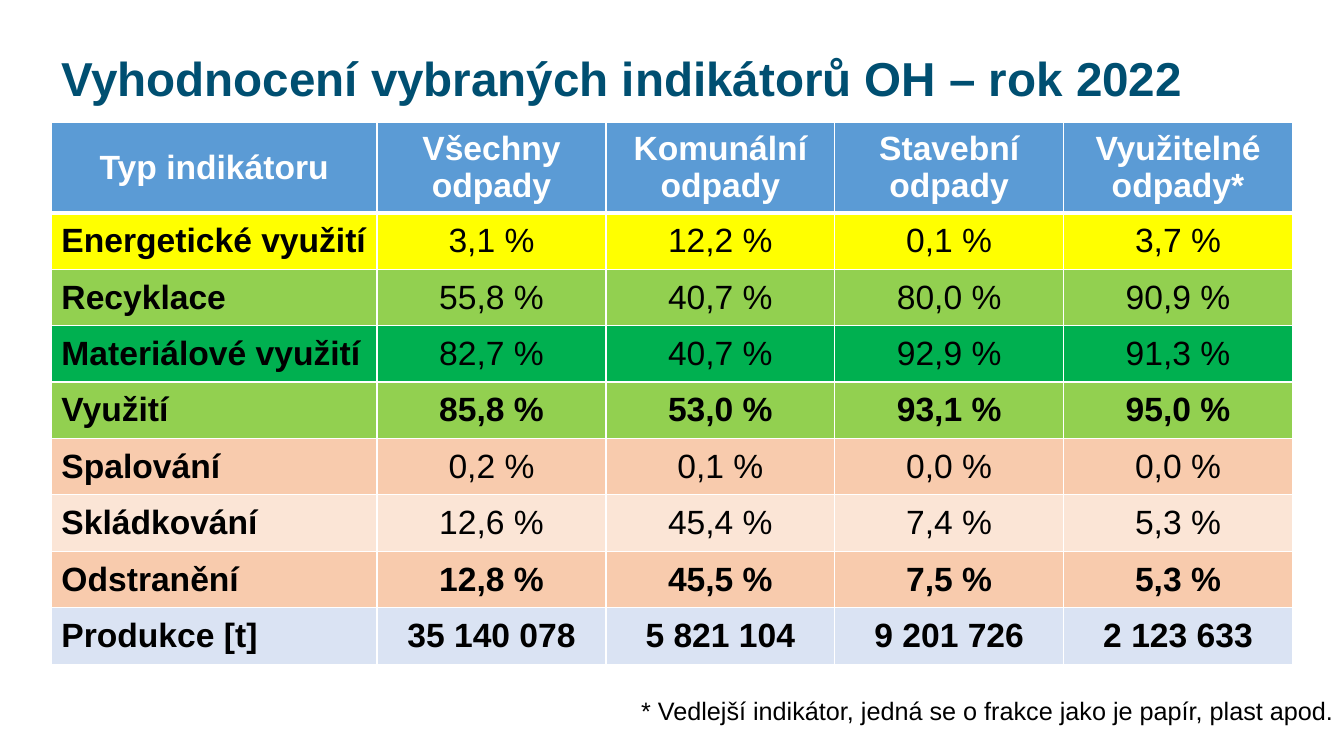
"""Builds a slide with a table of waste management indicators for 2022."""
from lxml import etree
from pptx import Presentation, util as u
from pptx.dml.color import RGBColor
from pptx.enum import text
from pptx.oxml.ns import qn

WHITE = RGBColor(0xFF, 0xFF, 0xFF)
BLACK = RGBColor(0, 0, 0)
NAVY = RGBColor(0x00, 0x4F, 0x71)
BLUE = RGBColor(0x5B, 0x9B, 0xD5)
YELLOW = RGBColor(0xFF, 0xFF, 0x00)
LIME = RGBColor(0x92, 0xD0, 0x50)
GREEN = RGBColor(0x00, 0xB0, 0x50)
PEACH = RGBColor(0xF8, 0xCB, 0xAD)
CREAM = RGBColor(0xFB, 0xE5, 0xD6)
PALE = RGBColor(0xDA, 0xE3, 0xF3)

TITLE = "Vyhodnocení vybraných indikátorů OH – rok 2022"
NOTE = "* Vedlejší indikátor, jedná se o frakce jako je papír, plast apod."
ROWS = [
    (BLUE, True, ["Typ indikátoru", "Všechny odpady", "Komunální odpady",
                  "Stavební odpady", "Využitelné odpady*"]),
    (YELLOW, False, ["Energetické využití", "3,1 %", "12,2 %", "0,1 %", "3,7 %"]),
    (LIME, False, ["Recyklace", "55,8 %", "40,7 %", "80,0 %", "90,9 %"]),
    (GREEN, False, ["Materiálové využití", "82,7 %", "40,7 %", "92,9 %", "91,3 %"]),
    (LIME, True, ["Využití", "85,8 %", "53,0 %", "93,1 %", "95,0 %"]),
    (PEACH, False, ["Spalování", "0,2 %", "0,1 %", "0,0 %", "0,0 %"]),
    (CREAM, False, ["Skládkování", "12,6 %", "45,4 %", "7,4 %", "5,3 %"]),
    (PEACH, True, ["Odstranění", "12,8 %", "45,5 %", "7,5 %", "5,3 %"]),
    (PALE, True, ["Produkce [t]", "35 140 078", "5 821 104", "9 201 726", "2 123 633"]),
]
LEFT, WIDTH = 0.51, 12.31
HEAD, BODY = 0.86, 0.56
FIRST, OTHER = 3.23, 2.27


def write(frame, words, size, color, bold=False, align=text.PP_ALIGN.LEFT):
    """Put one formatted paragraph into a text frame."""
    para = frame.paragraphs[0]
    para.alignment = align
    run = para.add_run()
    run.text = words
    style = {"name": "Arial", "size": u.Pt(size), "bold": bold}
    for key, value in style.items():
        setattr(run.font, key, value)
    run.font.color.rgb = color
    return para


def label(slide, box, wrap, anchor, *args):
    """Add a text box with one paragraph."""
    frame = slide.shapes.add_textbox(*map(u.Inches, box)).text_frame
    frame.word_wrap = wrap
    frame.vertical_anchor = anchor
    return write(frame, *args)


def border(cell, widths):
    """Draw white cell borders, given left, right, top and bottom widths."""
    props = cell._tc.get_or_add_tcPr()
    for spot, (side, width) in enumerate(zip("LRTB", widths)):
        line = etree.Element(qn(f"a:ln{side}"), w=str(u.Pt(width)))
        fill = etree.SubElement(line, qn("a:solidFill"))
        etree.SubElement(fill, qn("a:srgbClr"), val=str(WHITE))
        props.insert(spot, line)


def grid(slide):
    """Add the indicator table."""
    height = HEAD + BODY * (len(ROWS) - 1)
    box = map(u.Inches, (LEFT, 1.21, WIDTH, height))
    table = slide.shapes.add_table(len(ROWS), len(ROWS[0][2]), *box).table
    table.horz_banding = False
    for c, col in enumerate(table.columns):
        col.width = u.Inches(OTHER if c else FIRST)
    for r, (color, bold, words) in enumerate(ROWS):
        table.rows[r].height = u.Inches(BODY if r else HEAD)
        for c, word in enumerate(words):
            cell = table.cell(r, c)
            cell.vertical_anchor = text.MSO_ANCHOR.MIDDLE
            cell.fill.solid()
            cell.fill.fore_color.rgb = color
            border(cell, (1, 1, 3 if r == 1 else 1, 1 if r else 3))
            side = text.PP_ALIGN.LEFT if r and not c else text.PP_ALIGN.CENTER
            write(cell.text_frame, word, 24, BLACK if r else WHITE,
                  bold or c == 0, side)


def main():
    """Build and save the slide."""
    deck = Presentation()
    deck.slide_width, deck.slide_height = u.Inches(13.33), u.Inches(7.5)
    slide = deck.slides.add_slide(deck.slide_layouts[6])
    title = label(slide, (LEFT, 0.14, WIDTH, 1.32), True,
                  text.MSO_ANCHOR.MIDDLE, TITLE, 34, NAVY, True)
    title.line_spacing = 0.9
    grid(slide)
    label(slide, (6.26, 6.85, 7.14, 0.4), False,
          text.MSO_ANCHOR.TOP, NOTE, 18, BLACK)
    deck.save("out.pptx")


if __name__ == "__main__":
    main()
